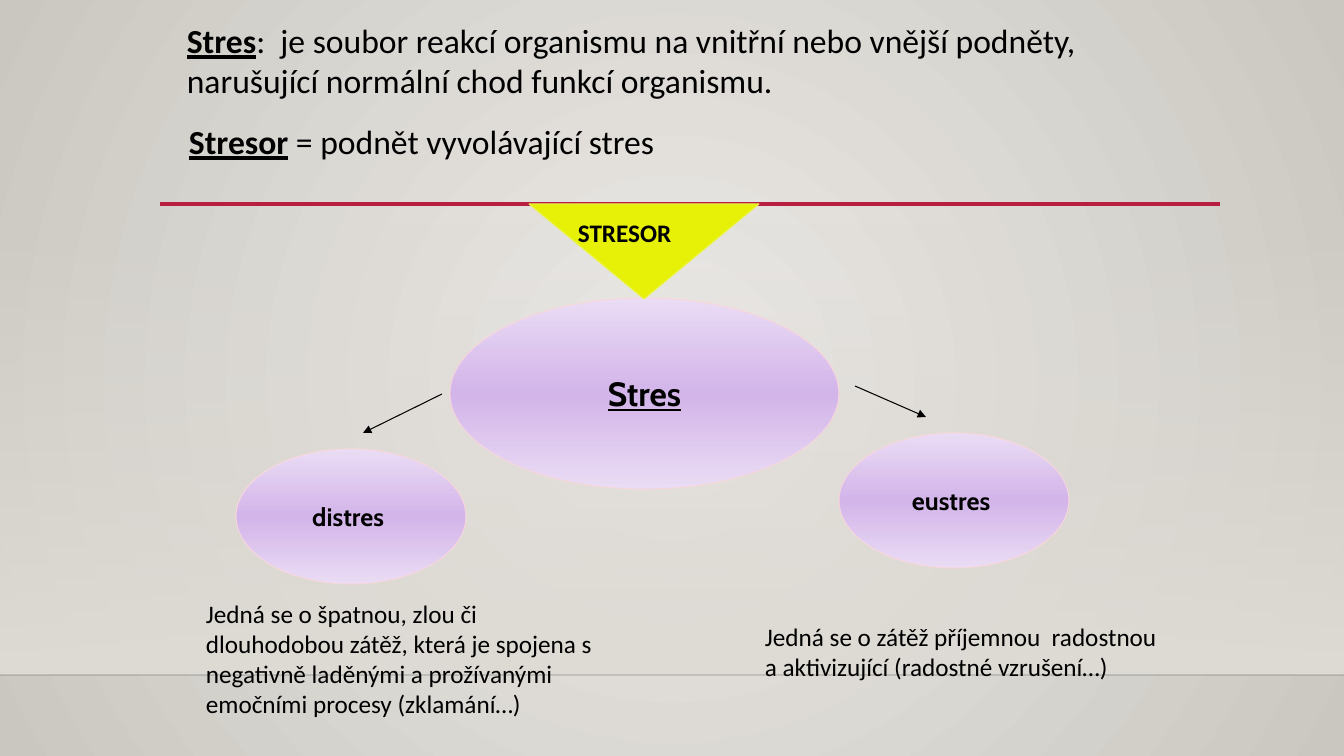
import pptx
import pptx.util
import pptx.dml.color
import pptx.enum.shapes
import pptx.enum.text
import pptx.oxml.ns
import lxml.etree
from dataclasses import dataclass

SHAPE = pptx.enum.shapes.MSO_SHAPE
ANCHOR = pptx.enum.text.MSO_ANCHOR
ALIGN = pptx.enum.text.PP_ALIGN
FIT = pptx.enum.text.MSO_AUTO_SIZE


@dataclass(frozen=True)
class Theme:
    ink: str = "000000"
    floor_line: str = "000001"
    rule: str = "B71E42"
    stressor: str = "E6F107"
    stressor_edge: str = "EBF34B"
    bubble_edge: str = "F7D7DC"
    bubble: tuple = ((0, "EADCF5", 100), (50, "D3B5E9", 100), (100, "EADCF5", 100))
    backdrop: tuple = ((0, "ECEAE7", 100), (100, "CAC7C1", 100))
    wall: tuple = ((0, "DFDBD5", 0), (100, "DFDBD5", 100))
    body_font: str = "Calibri"
    bubble_font: str = "Cabin"
    large: int = 24
    small: int = 18
    thin: float = 0.75


def px(length):
    return pptx.util.Emu(round(length * 914400 / 100.8))


def rgb(code):
    return pptx.dml.color.RGBColor.from_string(code)


def add_node(parent, tag, **attributes):
    node = lxml.etree.SubElement(parent, pptx.oxml.ns.qn(tag))
    for name, value in attributes.items():
        node.set(name, str(value))
    return node


class Painter:
    def __init__(self, page, theme):
        self.page = page
        self.theme = theme

    def gradient(self, fill, owner, stops, radial=False):
        fill.gradient()
        gradient = owner.find(".//" + pptx.oxml.ns.qn("a:gradFill"))
        for child in list(gradient):
            gradient.remove(child)
        stop_list = add_node(gradient, "a:gsLst")
        for position, color, opacity in stops:
            stop = add_node(stop_list, "a:gs", pos=position * 1000)
            tint = add_node(stop, "a:srgbClr", val=color)
            if opacity < 100:
                add_node(tint, "a:alpha", val=opacity * 1000)
        if radial:
            focus = add_node(gradient, "a:path", path="circle")
            add_node(focus, "a:fillToRect", l=50000, t=50000, r=50000, b=50000)
        else:
            add_node(gradient, "a:lin", ang=5400000, scaled=0)

    def backdrop(self):
        background = self.page.background
        self.gradient(background.fill, self.page.element, self.theme.backdrop, True)

    def shape(self, kind, area, fill, edge=None):
        shape = self.page.shapes.add_shape(kind, *map(px, area))
        shape.shadow.inherit = False
        if isinstance(fill, str):
            shape.fill.solid()
            shape.fill.fore_color.rgb = rgb(fill)
        else:
            self.gradient(shape.fill, shape.element, fill)
        if edge:
            shape.line.color.rgb = rgb(edge)
            shape.line.width = pptx.util.Pt(self.theme.thin)
        else:
            shape.line.fill.background()
        return shape

    def line(self, start, end, color, width, opacity=100, arrow=False):
        line = self.page.shapes.add_connector(
            pptx.enum.shapes.MSO_CONNECTOR.STRAIGHT, *map(px, start + end))
        line.line.color.rgb = rgb(color)
        line.line.width = pptx.util.Pt(width)
        properties = line.element.spPr
        add_node(properties, "a:effectLst")
        stroke = properties.find(pptx.oxml.ns.qn("a:ln"))
        if opacity < 100:
            tint = stroke.find(".//" + pptx.oxml.ns.qn("a:srgbClr"))
            add_node(tint, "a:alpha", val=opacity * 1000)
        if arrow:
            add_node(stroke, "a:tailEnd", type="triangle")

    def add_span(self, para, words, size, font, bold=False, underline=False):
        span = para.add_run()
        span.text = words
        span.font.size = pptx.util.Pt(size)
        span.font.name = font
        span.font.color.rgb = rgb(self.theme.ink)
        span.font.bold = bold
        span.font.underline = underline

    def text(self, area, spans, size, wrap=True):
        box = self.page.shapes.add_textbox(*map(px, area))
        frame = box.text_frame
        frame.word_wrap = wrap
        frame.auto_size = FIT.SHAPE_TO_FIT_TEXT
        for words, bold, underline in spans:
            self.add_span(frame.paragraphs[0], words, size, self.theme.body_font,
                          bold, underline)

    def bubble(self, area, words, size, underline=False):
        shape = self.shape(SHAPE.OVAL, area, self.theme.bubble, self.theme.bubble_edge)
        frame = shape.text_frame
        frame.word_wrap = False
        frame.vertical_anchor = ANCHOR.MIDDLE
        para = frame.paragraphs[0]
        para.alignment = ALIGN.CENTER
        self.add_span(para, words, size, self.theme.bubble_font, True, underline)


def main():
    theme = Theme()
    deck = pptx.Presentation()
    deck.slide_width, deck.slide_height = px(1344), px(756)
    page = deck.slides.add_slide(deck.slide_layouts[6])
    painter = Painter(page, theme)

    painter.backdrop()
    painter.shape(SHAPE.RECTANGLE, (0, 223, 1344, 452), theme.wall)
    painter.line((0, 675), (1344, 675), theme.floor_line, 1, opacity=20)
    painter.line((160, 204), (1220, 204), theme.rule, 2.5)

    painter.text((177, 15, 998, 92), [
        ("Stres", True, True),
        (":  je soubor reakcí organismu na vnitřní nebo vnější podněty, "
         "narušující normální chod funkcí organismu.", False, False),
    ], theme.large)

    painter.bubble((450, 298, 389, 191), "Stres", theme.large, underline=True)
    painter.bubble((236, 449, 230, 135), "distres ", theme.small)
    painter.bubble((839, 433, 230, 135), "eustres ", theme.small)
    painter.line((442, 394), (363, 433), theme.ink, theme.thin, arrow=True)
    painter.line((855, 386), (926, 417), theme.ink, theme.thin, arrow=True)

    painter.text((196, 593, 420, 132), [
        ("Jedná se o špatnou, zlou či dlouhodobou zátěž, která je spojena s "
         "negativně laděnými a prožívanými emočními procesy (zklamání…)", False, False),
    ], theme.small)
    painter.text((755, 616, 420, 72), [
        ("Jedná se o zátěž příjemnou  radostnou a aktivizující "
         "(radostné vzrušení…)", False, False),
    ], theme.small)
    painter.text((179, 116, 510, 50), [
        ("Stresor", True, True),
        (" = podnět vyvolávající stres", False, False),
    ], theme.large, wrap=False)

    stressor = painter.shape(SHAPE.ISOSCELES_TRIANGLE, (529, 204, 230, 95),
                             theme.stressor, theme.stressor_edge)
    stressor.rotation = 180
    painter.text((568, 212, 142, 40), [("STRESOR", True, False)], theme.small, wrap=False)

    deck.save("out.pptx")


if __name__ == "__main__":
    main()
